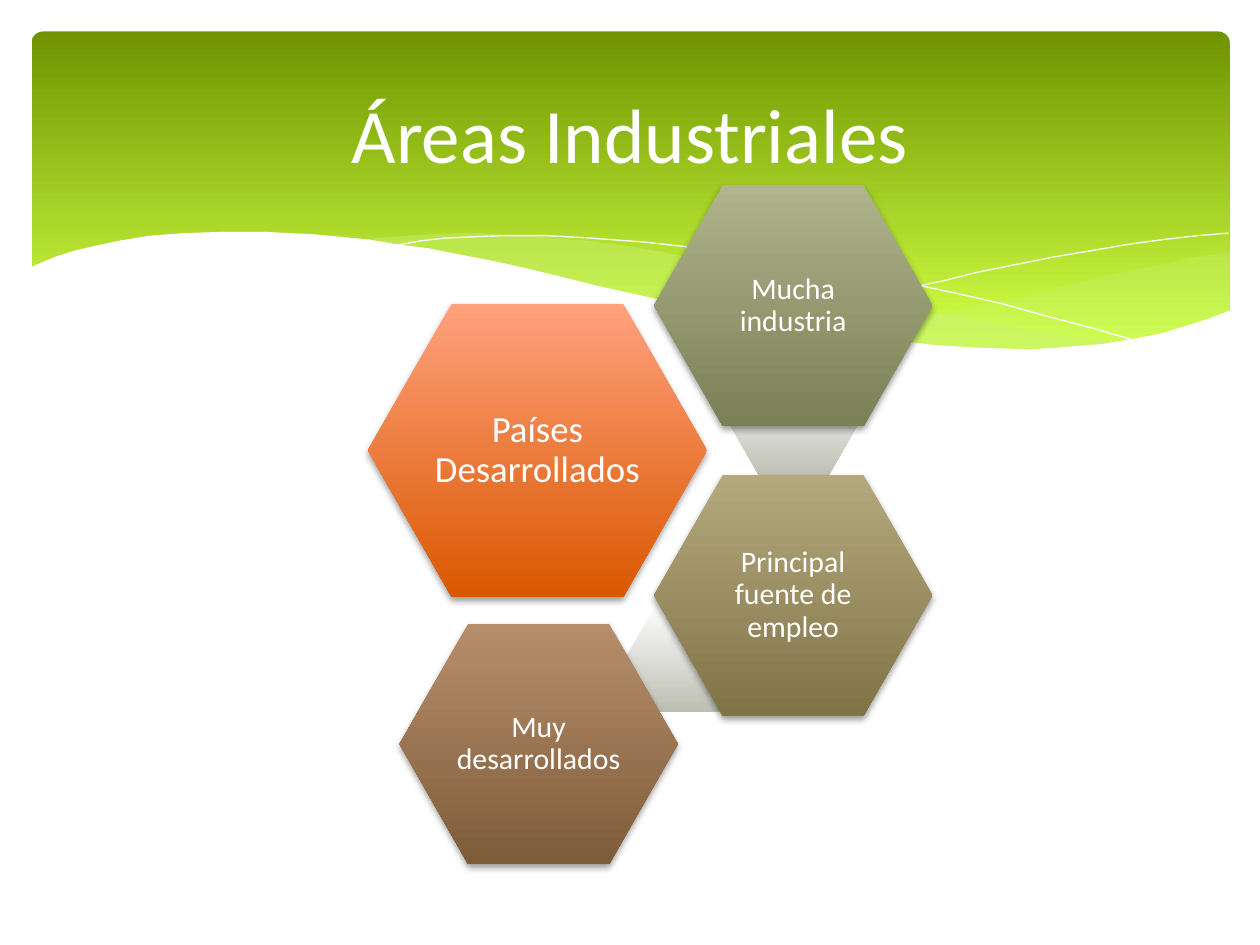
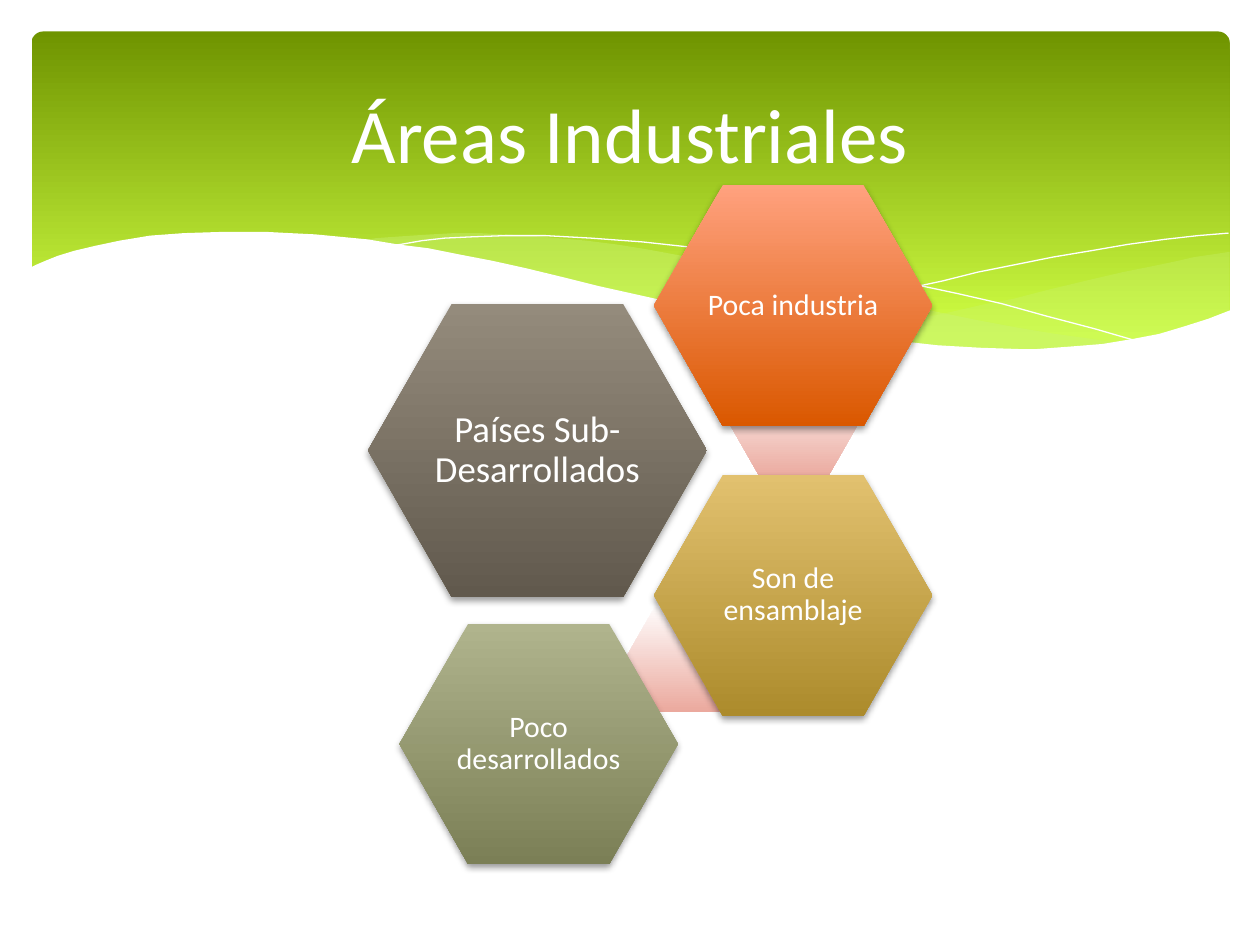
"""Builds two slides on industrial areas: a green wave banner above a cluster of hexagons."""
from lxml import etree
from pptx import Presentation
from pptx.dml.color import RGBColor
from pptx.enum.shapes import MSO_SHAPE
from pptx.enum.text import MSO_ANCHOR, PP_ALIGN
from pptx.oxml.ns import qn
from pptx.util import Inches, Pt

HEXAGON = MSO_SHAPE.HEXAGON
ROUNDED = MSO_SHAPE.ROUNDED_RECTANGLE
MIDDLE = MSO_ANCHOR.MIDDLE
CENTER = PP_ALIGN.CENTER

deck = Presentation()
deck.slide_width, deck.slide_height = Inches(10), Inches(7.5)
COLUMNS = 1000
UNIT = deck.slide_width // COLUMNS

WHITE = "FFFFFF"
LIME = "CAF278"
BANNER = ("6F9400", "D0FF44")
ORANGE = ("FFA17E", "DA5800")
SAGE = ("B0B48D", "7B7F56")
OLIVE = ("B4A87D", "807447")
BROWN = ("B68E6C", "7F5C39")
TAUPE = ("948B7C", "61594D")
GOLD = ("E2C16F", "AC8B2C")
GREY_LINK = (WHITE, "BDBFB2")
PINK_LINK = (WHITE, "EBA99E")

TITLE_AREA = (50, 37, 900, 137)
TEXT_SHARE = 2 / 3
BIG, SMALL, LINK = (269, 233), (221, 191), (102, 87)
HEX_SPOTS = [(292, 241, BIG), (579, 293, LINK), (519, 147, SMALL),
             (497, 478, LINK), (519, 377, SMALL), (317, 495, SMALL)]

RIGHT_WAVE = [
    (975, 200), (962, 202), (948, 204), (935, 207), (921, 210), (906, 213), (891, 216),
    (861, 223), (832, 230), (805, 237), (779, 242), (753, 248), (729, 253), (706, 257),
    (683, 262), (661, 265), (691, 269), (719, 272), (745, 275), (769, 277), (803, 278),
    (835, 277), (854, 276), (872, 274), (889, 272), (905, 269), (921, 265), (935, 262),
    (949, 257), (963, 252), (976, 247), (976, 200)]
MIDDLE_WAVE = [
    (893, 273), (866, 269), (837, 265), (807, 260), (775, 254), (741, 247), (706, 240),
    (668, 231), (629, 222), (598, 214), (569, 208), (541, 203), (514, 198), (489, 194),
    (465, 191), (442, 189), (420, 187), (399, 186), (380, 185), (361, 185), (344, 186),
    (328, 187), (313, 188), (299, 189), (286, 191), (323, 196), (362, 203), (404, 211),
    (449, 222), (491, 232), (530, 240), (566, 248), (601, 255), (634, 261), (665, 266),
    (695, 270), (722, 274), (748, 276), (773, 277), (796, 278), (828, 278), (857, 277),
    (876, 275)]
LEFT_STROKE = [
    (309, 195), (318, 194), (335, 191), (353, 189), (374, 188), (401, 187), (433, 187),
    (469, 189), (510, 192), (556, 197), (608, 204), (665, 213), (695, 219), (727, 226),
    (760, 233), (795, 241), (831, 251), (869, 261), (907, 272)]
RIGHT_STROKE = [
    (613, 257), (653, 246), (695, 235), (720, 229), (748, 223), (776, 216), (806, 210),
    (836, 204), (866, 199), (895, 194), (924, 190), (951, 187), (975, 185)]
WHITE_WAVE = [
    (977, 246), (959, 253), (940, 259), (920, 265), (899, 269), (875, 273), (850, 275),
    (823, 277), (809, 277), (778, 276), (744, 274), (708, 270), (668, 265), (626, 258),
    (579, 250), (529, 239), (475, 227), (447, 220), (418, 213), (391, 207), (365, 202),
    (340, 197), (316, 194), (292, 190), (271, 188), (250, 186), (230, 185), (211, 184),
    (177, 184), (146, 185), (119, 187), (95, 191), (76, 195), (59, 199), (46, 203),
    (36, 207), (29, 210), (23, 213), (23, 329), (977, 329)]
WAVES = [(RIGHT_WAVE, LIME, 29), (MIDDLE_WAVE, LIME, 40), (LEFT_STROKE, None, 100),
         (RIGHT_STROKE, None, 100), (WHITE_WAVE, WHITE, 100)]

PAGES = [
    (GREY_LINK, [("Países Desarrollados", ORANGE), ("Mucha industria", SAGE),
                 ("Principal fuente de empleo", OLIVE), ("Muy desarrollados", BROWN)]),
    (PINK_LINK, [("Países Sub-Desarrollados", TAUPE), ("Poca industria", ORANGE),
                 ("Son de ensamblaje", GOLD), ("Poco desarrollados", SAGE)]),
]


def paint(shape, colours, end=1.0):
    """Fill a shape with a vertical gradient and drop its outline and shadow."""
    shape.shadow.inherit = False
    shape.line.fill.background()
    shape.fill.gradient()
    shape.fill.gradient_angle = 270
    for stop, colour, position in zip(shape.fill.gradient_stops, colours, (0, end)):
        stop.color.rgb = RGBColor.from_string(colour)
        stop.position = position


def write(page, area, text, size, margin, spacing):
    """Add centred white text in a box given in grid units."""
    box = page.shapes.add_textbox(*(round(UNIT * length) for length in area))
    frame = box.text_frame
    side, edge = margin
    frame_format = {"word_wrap": True, "vertical_anchor": MIDDLE,
                    "margin_left": side * UNIT, "margin_right": side * UNIT,
                    "margin_top": edge * UNIT, "margin_bottom": edge * UNIT}
    for name, value in frame_format.items():
        setattr(frame, name, value)
    para = frame.paragraphs[0]
    para.alignment, para.line_spacing = CENTER, spacing
    span = para.add_run()
    span.text = text
    for name, value in {"name": "Calibri", "size": Pt(size)}.items():
        setattr(span.font, name, value)
    span.font.color.rgb = RGBColor.from_string(WHITE)


for link_colours, topics in PAGES:
    page = deck.slides.add_slide(deck.slide_layouts[6])

    banner = page.shapes.add_shape(ROUNDED, *(UNIT * length for length in (25, 25, 951, 270)))
    banner.adjustments[0] = 0.034
    paint(banner, BANNER, 0.9)

    for points, colour, opacity in WAVES:
        outline = page.shapes.build_freeform(*points[0], scale=UNIT)
        outline.add_line_segments(points[1:], close=colour is not None)
        wave = outline.convert_to_shape()
        wave.shadow.inherit = False
        if colour is None:
            wave.fill.background()
            wave.line.color.rgb = RGBColor.from_string(WHITE)
            wave.line.width = Pt(0)
            continue
        wave.line.fill.background()
        wave.fill.solid()
        wave.fill.fore_color.rgb = RGBColor.from_string(colour)
        if opacity < 100:
            tone = wave._element.spPr.find(qn("a:solidFill"))[0]
            etree.SubElement(tone, qn("a:alpha"), val=str(opacity * 1000))

    write(page, TITLE_AREA, "Áreas Industriales", 44, (10, 5), 1.0)

    remaining = iter(topics)
    for left, top, size in HEX_SPOTS:
        width, height = size
        hexagon = page.shapes.add_shape(
            HEXAGON, *(UNIT * length for length in (left, top, width, height)))
        hexagon.adjustments[0], hexagon.adjustments[1] = 0.286, 1.155
        if size == LINK:
            paint(hexagon, link_colours)
            continue
        text, colours = next(remaining)
        paint(hexagon, colours)
        effects = hexagon._element.spPr.find(qn("a:effectLst"))
        shadow = etree.SubElement(effects, qn("a:outerShdw"), blurRad=str(Pt(4)),
                                  dist=str(Pt(2)), dir="5400000", rotWithShape="0")
        tone = etree.SubElement(shadow, qn("a:srgbClr"), val="000000")
        etree.SubElement(tone, qn("a:alpha"), val="38000")
        inset = (1 - TEXT_SHARE) / 2
        area = (left + width * inset, top + height * inset,
                width * TEXT_SHARE, height * TEXT_SHARE)
        write(page, area, text, 21 if size == BIG else 17, (2, 2), 0.9)

deck.save("out.pptx")
